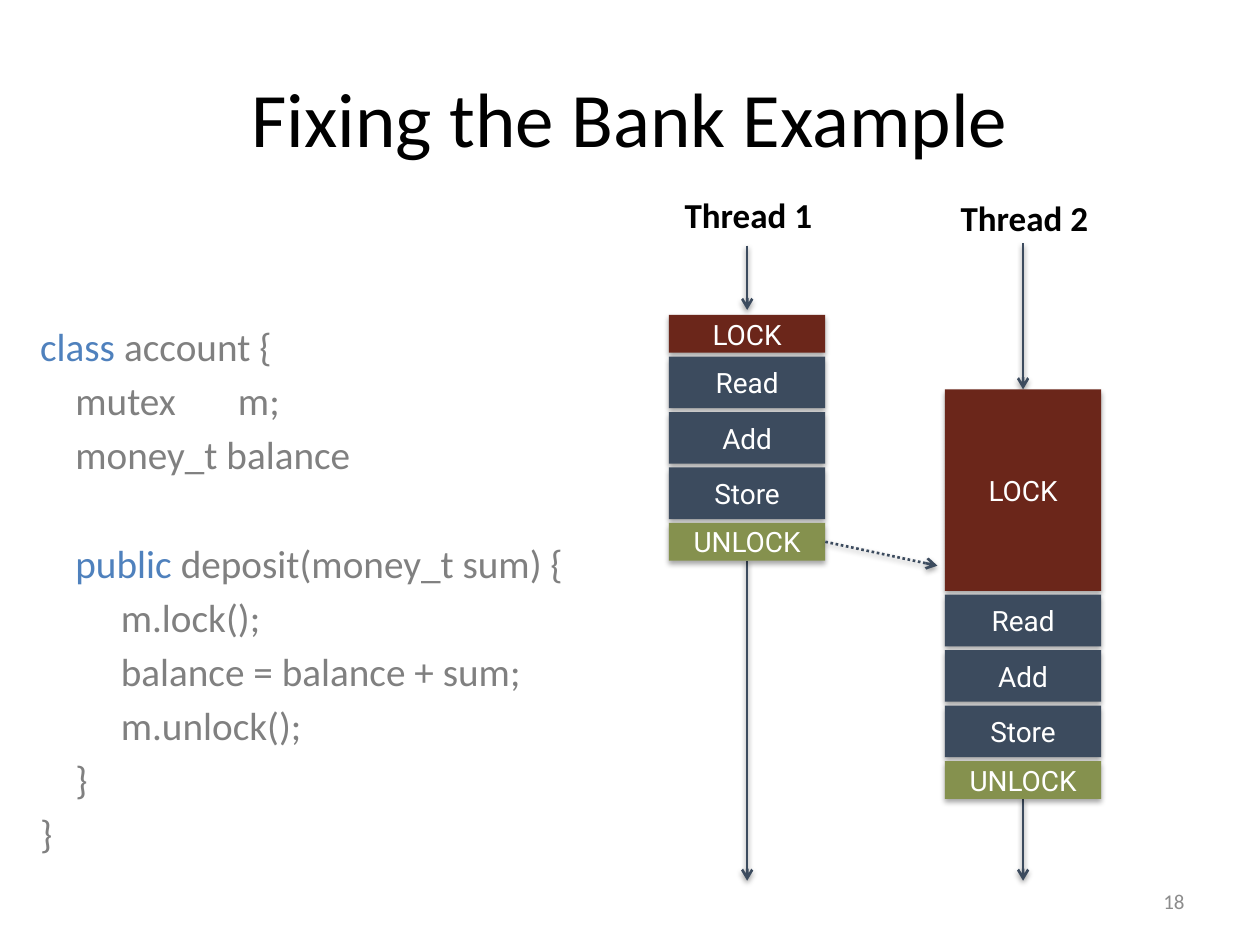
from dataclasses import dataclass

from lxml.etree import SubElement as Sub
from pptx import Presentation as Deck
from pptx.dml.color import RGBColor as Color
from pptx.enum.dml import MSO_LINE as Dash
from pptx.enum.shapes import MSO_CONNECTOR as Link, MSO_SHAPE as Shape
from pptx.enum.text import MSO_ANCHOR as Anchor, PP_ALIGN as Align
from pptx.oxml.ns import qn
from pptx.util import Inches, Pt


@dataclass(frozen=True)
class Theme:
    """Colours, fonts and type sizes of the slide."""
    ink: str = "000000"
    key: str = "4F81BD"
    code: str = "808080"
    note: str = "8C8C8C"
    pale: str = "FFFFFF"
    lock: str = "6B261A"
    work: str = "3C4B5E"
    free: str = "85914E"
    sans: str = "Calibri"
    label: str = "Roboto"
    head: float = 44
    body: float = 22.4
    name: float = 20
    step: float = 16
    foot: float = 12


T = Theme()
GAP, WIDE, LOW, TALL = 0.03, 1.24, 0.3, 0.41
LEAD, BLANK = 4, 35.3
CODE = [
    (0, LEAD, "class ", "account {"),
    (0.28, LEAD, "", "mutex\tm;"),
    (0.28, LEAD, "", "money_t balance"),
    (0.28, BLANK, "public ", "deposit(money_t sum) {"),
    (0.64, LEAD, "", "m.lock();"),
    (0.64, LEAD, "", "balance = balance + sum;"),
    (0.64, LEAD, "", "m.unlock();"),
    (0.28, LEAD, "", "}"),
    (0, LEAD, "", "}"),
]


def assign(item, form):
    """Set each format value of a dict on an item."""
    for name, value in form.items():
        setattr(item, name, value)


def write(para, words, size, tint, font=T.sans, bold=False):
    """Add a styled run to a paragraph."""
    run = para.add_run()
    run.text = words
    assign(run.font, {"size": Pt(size), "name": font, "bold": bold})
    run.font.color.rgb = Color.from_string(tint)


def shade(props, dist, alpha):
    """Put a soft shadow below a shape or line."""
    list_tag = qn("a:effectLst")
    effect = props.find(list_tag)
    if effect is None:
        effect = Sub(props, list_tag)
    cast = Sub(effect, qn("a:outerShdw"), blurRad=str(Pt(3.1)),
               dist=str(Pt(dist)), dir="5400000", rotWithShape="0")
    tint = Sub(cast, qn("a:srgbClr"), val=T.ink)
    Sub(tint, qn("a:alpha"), val=str(alpha * 1000))


def frame(slide, place, **form):
    """Add a text box and return its text frame."""
    text = slide.shapes.add_textbox(*map(Inches, place)).text_frame
    assign(text, {"word_wrap": True, **form})
    return text


def line_text(slide, place, words, size, tint, align, bold=False, **form):
    """Add a text box with one line of text."""
    para = frame(slide, place, **form).paragraphs[0]
    para.alignment = align
    write(para, words, size, tint, bold=bold)


def listing(slide, place):
    """Add the indented code of the account class."""
    text = frame(slide, place)
    for row, (dent, space, key, rest) in enumerate(CODE):
        para = text.add_paragraph() if row else text.paragraphs[0]
        para.space_before = Pt(space)
        props = para._p.get_or_add_pPr()
        props.set("marL", str(Inches(dent)))
        if "\t" in rest:
            tabs = Sub(props, qn("a:tabLst"))
            Sub(tabs, qn("a:tab"), pos=str(Inches(1.29)), algn="l")
        if key:
            write(para, key, T.body, T.key)
        write(para, rest, T.body, T.code)


def arrow(slide, start, end, dash=None):
    """Draw a shadowed arrow between two points."""
    link = slide.shapes.add_connector(Link.STRAIGHT, *map(Inches, start + end))
    assign(link.line, {"width": Pt(1.5), "dash_style": dash})
    link.line.color.rgb = Color.from_string(T.work)
    props = link._element.spPr
    Sub(props.find(qn("a:ln")), qn("a:tailEnd"), type="arrow")
    shade(props, 1.6, 38)


def block(slide, place, words, tint):
    """Draw a filled box with a centred label."""
    box = slide.shapes.add_shape(Shape.RECTANGLE, *map(Inches, place))
    box.shadow.inherit = False
    box.fill.solid()
    box.fill.fore_color.rgb = Color.from_string(tint)
    box.line.fill.background()
    shade(box._element.spPr, 1.8, 35)
    assign(box.text_frame, {"vertical_anchor": Anchor.MIDDLE, "word_wrap": True})
    para = box.text_frame.paragraphs[0]
    para.alignment = Align.CENTER
    write(para, words, T.step, T.pale, T.label)


def thread(slide, name, left, top, start, tip, first, hold):
    """Draw one thread: its name, its arrows and its stack of steps."""
    mid = left + WIDE / 2
    steps = [("LOCK", hold, T.lock)]
    steps += [(word, TALL, T.work) for word in ("Read", "Add", "Store")]
    steps.append(("UNLOCK", LOW, T.free))
    last = first + sum(high + GAP for _, high, _ in steps) - GAP
    line_text(slide, (left + 0.02, top, 1.22, 0.44), name, T.name, T.ink,
              Align.CENTER, bold=True, word_wrap=False)
    arrow(slide, (mid, start), (mid, tip))
    arrow(slide, (mid, last), (mid, 6.99))
    for word, high, tint in steps:
        block(slide, (left, first, WIDE, high), word, tint)
        first += high + GAP


def main():
    """Build the slide and save it."""
    deck = Deck()
    assign(deck, {"slide_width": Inches(10), "slide_height": Inches(7.5)})
    slide = deck.slides.add_slide(deck.slide_layouts[6])
    line_text(slide, (0.5, 0.3, 9, 1.25), "Fixing the Bank Example", T.head,
              T.ink, Align.CENTER, vertical_anchor=Anchor.MIDDLE)
    listing(slide, (0.22, 2.51, 4.51, 3.96))
    line_text(slide, (7.17, 6.95, 2.33, 0.4), "18", T.foot, T.note,
              Align.RIGHT, vertical_anchor=Anchor.MIDDLE)
    thread(slide, "Thread 1", 5.31, 1.49, 1.95, 2.46, 2.5, LOW)
    thread(slide, "Thread 2", 7.5, 1.51, 1.93, 3.09, 3.09, 1.6)
    arrow(slide, (6.55, 4.3), (7.44, 4.49), Dash.ROUND_DOT)
    deck.save("out.pptx")


if __name__ == "__main__":
    main()
